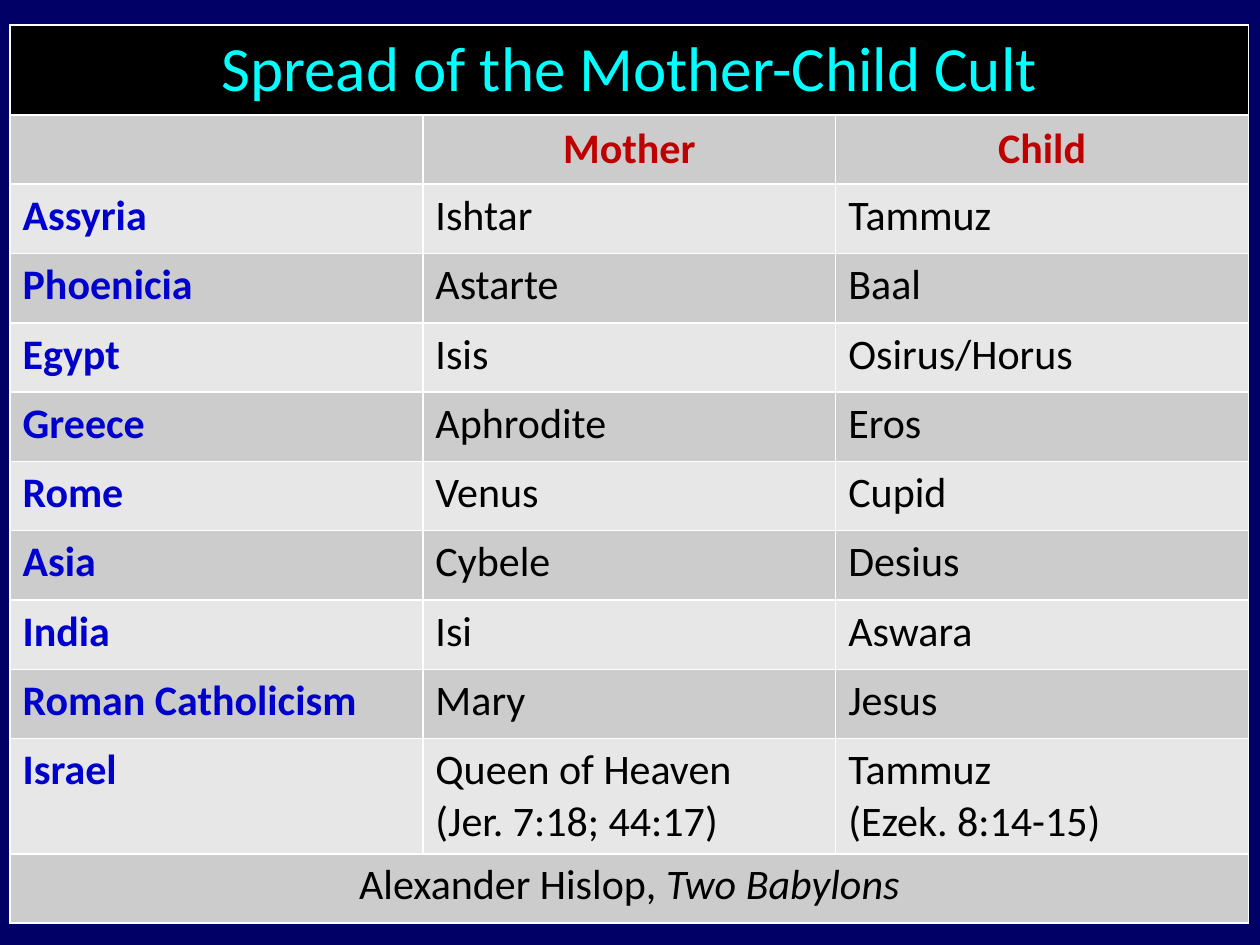
"""Build a slide with a table of mother and child deities by nation."""
import pptx
import pptx.util
import pptx.dml.color
import pptx.enum.text

Inches = pptx.util.Inches
ALIGN = pptx.enum.text.PP_ALIGN
MIDDLE = pptx.enum.text.MSO_ANCHOR.MIDDLE

TITLE = "Spread of the Mother-Child Cult"
HEADS = ["", "Mother", "Child"]
CULTS = [
    ("Assyria", "Ishtar", "Tammuz"),
    ("Phoenicia", "Astarte", "Baal"),
    ("Egypt", "Isis", "Osirus/Horus"),
    ("Greece", "Aphrodite", "Eros"),
    ("Rome", "Venus", "Cupid"),
    ("Asia", "Cybele", "Desius"),
    ("India", "Isi", "Aswara"),
    ("Roman Catholicism", "Mary", "Jesus"),
    ("Israel", "Queen of Heaven\n(Jer. 7:18; 44:17)", "Tammuz\n(Ezek. 8:14-15)"),
]
AUTHOR, BOOK = "Alexander Hislop, ", "Two Babylons"
COLORS = {
    "back": "000066", "title": "00FFFF", "bar": "000000", "head": "C00000",
    "nation": "0000CC", "text": "000000", "dark": "CCCCCC", "light": "E7E7E7",
}
LEFT, TOP, WIDTH = 0.08, 0.2, 9.83
TALL, ROW, LAST = 0.7, 0.55, 0.91


def color(name):
    return pptx.dml.color.RGBColor.from_string(COLORS[name])


def paint(cell, fill, ink="text", size=24, bold=False, align=ALIGN.LEFT):
    cell.fill.solid()
    cell.fill.fore_color.rgb = color(fill)
    for para in cell.text_frame.paragraphs:
        para.alignment = align
        font = para.font
        font.name, font.size, font.bold = "Calibri", pptx.util.Pt(size), bold
        font.color.rgb = color(ink)


def main():
    deck = pptx.Presentation()
    deck.slide_width, deck.slide_height = Inches(10), Inches(7.5)
    slide = deck.slides.add_slide(deck.slide_layouts[6])
    slide.background.fill.solid()
    slide.background.fill.fore_color.rgb = color("back")

    sizes = [TALL] + [ROW] * len(CULTS) + [LAST, ROW]
    table = slide.shapes.add_table(
        len(sizes), len(HEADS), Inches(LEFT), Inches(TOP),
        Inches(WIDTH), Inches(sum(sizes))).table
    for row, size in zip(table.rows, sizes):
        row.height = Inches(size)

    title, foot = table.cell(0, 0), table.cell(len(sizes) - 1, 0)
    for cell in (title, foot):
        cell.merge(table.cell(len(sizes) - 1 if cell is foot else 0, len(HEADS) - 1))
    title.text = TITLE
    title.vertical_anchor = MIDDLE
    paint(title, "bar", "title", 36, align=ALIGN.CENTER)

    for col, text in enumerate(HEADS):
        cell = table.cell(1, col)
        cell.text = text
        cell.vertical_anchor = MIDDLE
        paint(cell, "dark", "head", bold=True, align=ALIGN.CENTER)

    for num, cult in enumerate(CULTS):
        for col, text in enumerate(cult):
            cell = table.cell(num + 2, col)
            cell.text = text
            first = col == 0
            paint(cell, "dark" if num % 2 else "light",
                  "nation" if first else "text", bold=first)

    para = foot.text_frame.paragraphs[0]
    para.add_run().text = AUTHOR
    book = para.add_run()
    book.text = BOOK
    book.font.italic = True
    paint(foot, "dark", align=ALIGN.CENTER)

    deck.save("out.pptx")


if __name__ == "__main__":
    main()
